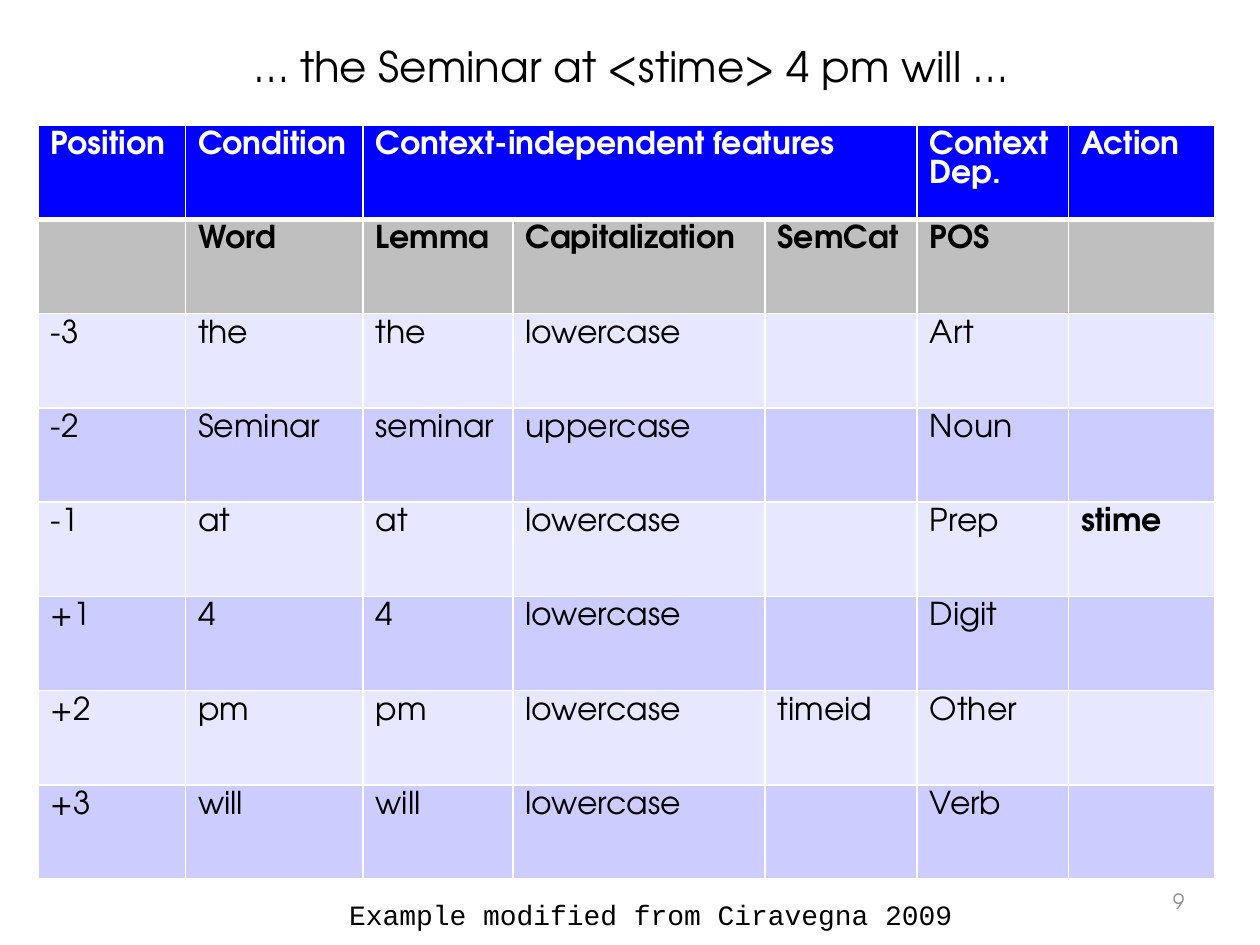
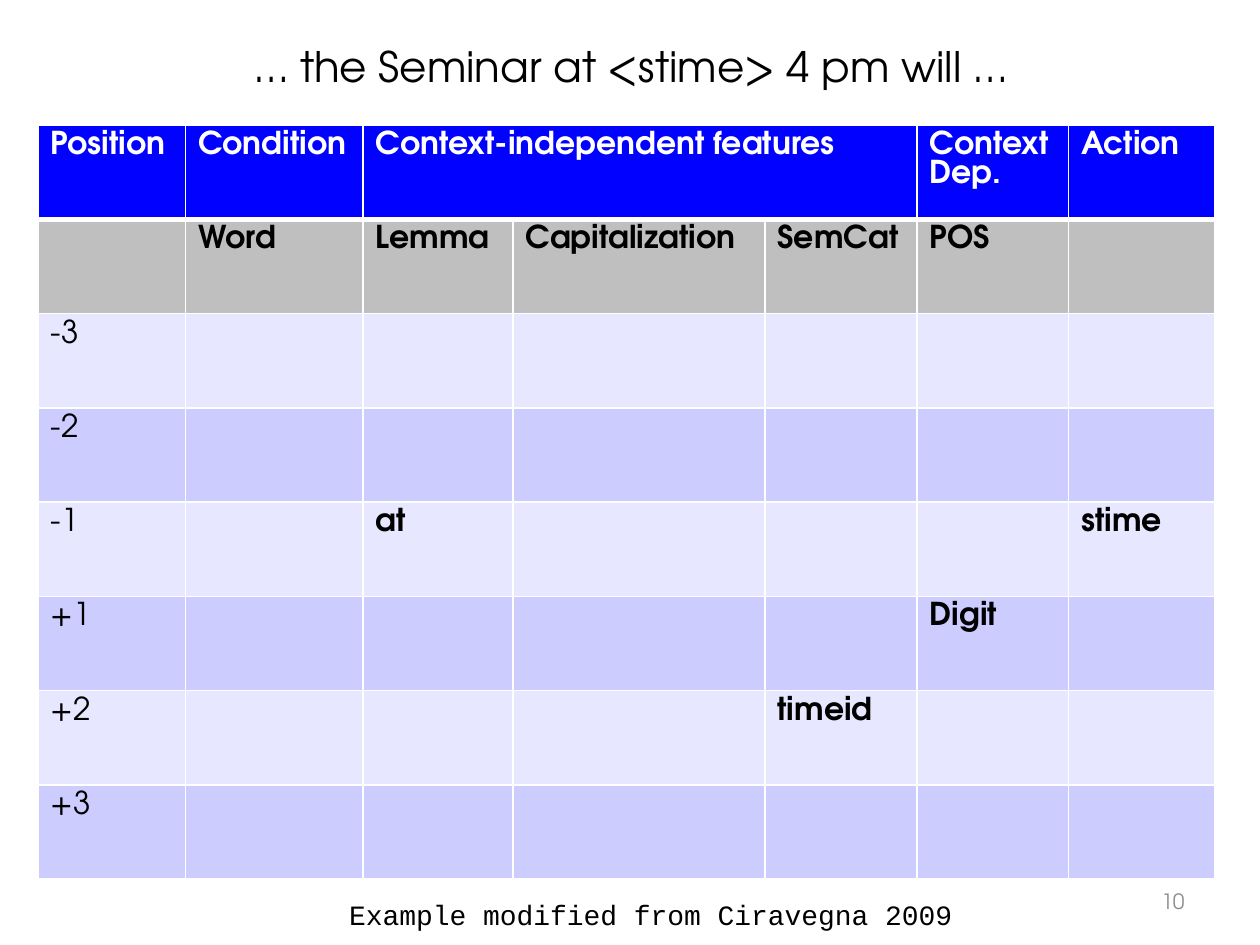
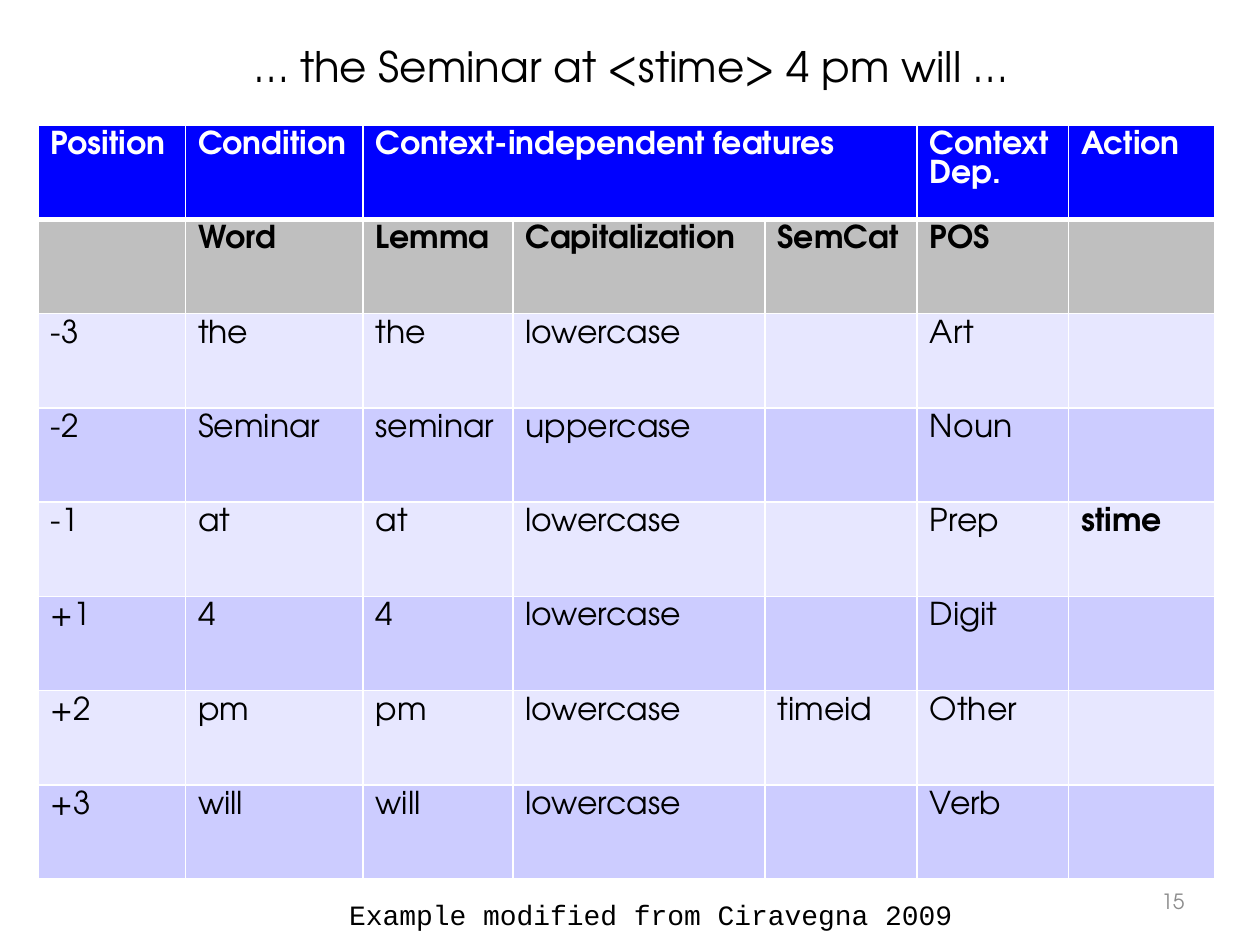
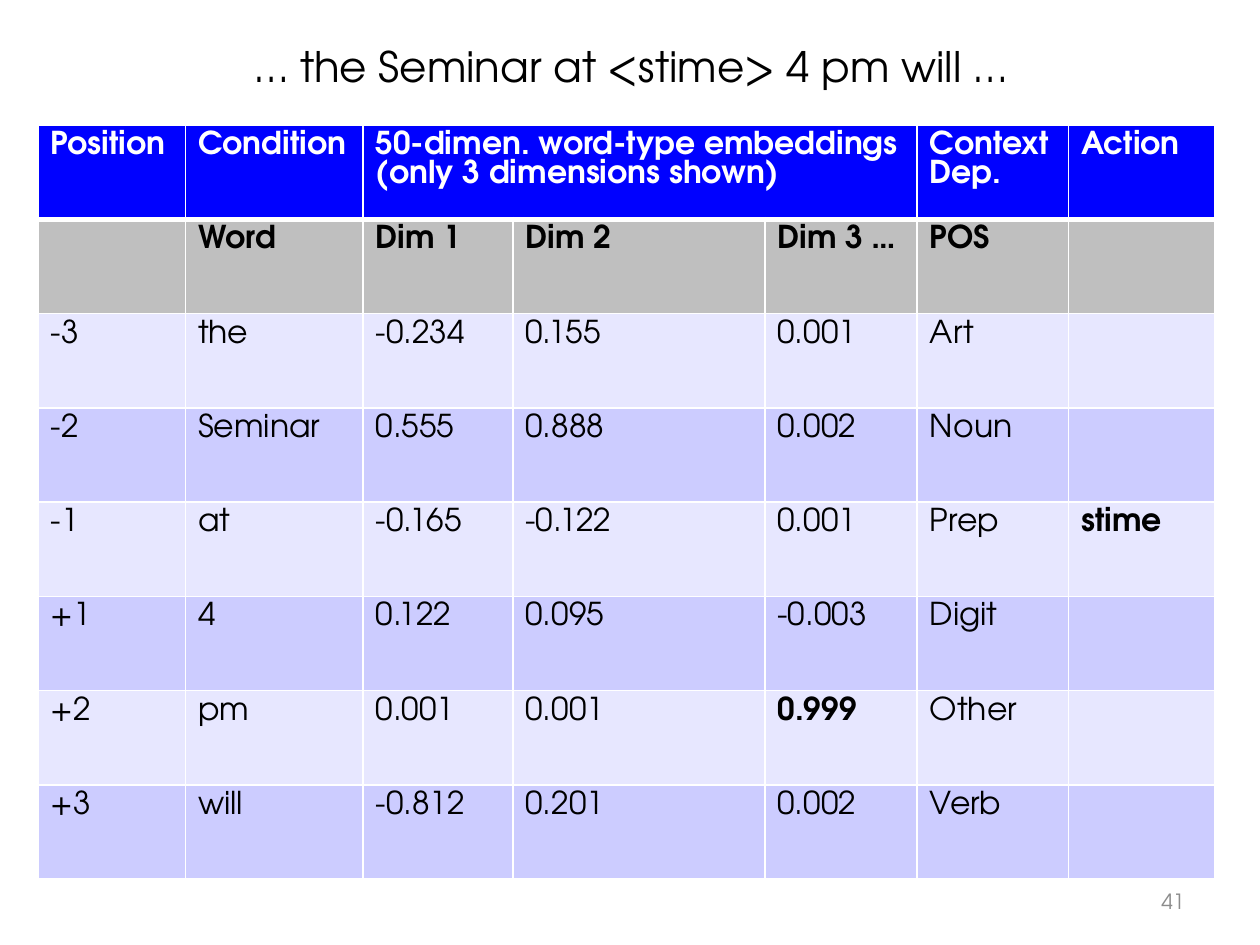
from lxml.etree import SubElement
from pptx import Presentation
from pptx.dml.color import RGBColor
from pptx.enum.text import MSO_ANCHOR, MSO_AUTO_SIZE, PP_ALIGN
from pptx.oxml.ns import qn
from pptx.util import Cm, Pt

COLORS = {
    "text": "000000",
    "white": "FFFFFF",
    "number": "8C8C8C",
    "header": "0001FF",
    "subheader": "BFBFBF",
    "light": "E7E7FF",
    "dark": "CCCCFF",
}
FONT = "TeX Gyre Adventor"
MONO = "Courier New"
TITLE = "… the Seminar at <stime> 4 pm will …"
CREDIT = "Example modified from Ciravegna 2009"

# Table geometry in cm
COL_WIDTHS = [2.97, 3.58, 3.02, 5.08, 3.07, 3.05, 2.95]
ROW_HEIGHT = 1.9
FEATURE_COLS = (2, 4)

# Table content, one entry per token; a leading * makes a cell bold
POSITIONS = ["-3", "-2", "-1", "+1", "+2", "+3"]
WORDS = ["the", "Seminar", "at", "4", "pm", "will"]
POS_TAGS = ["Art", "Noun", "Prep", "Digit", "Other", "Verb"]
ACTIONS = ["", "", "*stime", "", "", ""]
BLANK = [""] * 6

LEXICAL_HEAD = ("Context-independent features",
                ["Lemma", "Capitalization", "SemCat"])
LEXICAL = [
    ["the", "seminar", "at", "4", "pm", "will"],
    ["lowercase", "uppercase"] + ["lowercase"] * 4,
    ["", "", "", "", "timeid", ""],
]
EMBEDDING_HEAD = ("50-dimen. word-type embeddings (only 3 dimensions shown)",
                  ["Dim 1", "Dim 2", "Dim 3 …"])
EMBEDDING = [
    ["-0.234", "0.555", "-0.165", "0.122", "0.001", "-0.812"],
    ["0.155", "0.888", "-0.122", "0.095", "0.001", "0.201"],
    ["0.001", "0.002", "0.001", "-0.003", "*0.999", "0.002"],
]
RULE = [
    ["", "", "*at", "", "", ""],
    BLANK,
    ["", "", "", "", "*timeid", ""],
]
RULE_TAGS = ["", "", "", "*Digit", "", ""]


def rgb(name):
    return RGBColor.from_string(COLORS[name])


def write(tf, text, size=18, font=FONT, color="text", bold=False,
          align=PP_ALIGN.LEFT):
    p = tf.paragraphs[0]
    p.alignment = align
    r = p.add_run()
    r.text = text
    r.font.size = Pt(size)
    r.font.name = font
    r.font.bold = bold
    r.font.color.rgb = rgb(color)


def place(sp, x, y, w, h, anchor=MSO_ANCHOR.TOP):
    sp.left, sp.top, sp.width, sp.height = Cm(x), Cm(y), Cm(w), Cm(h)
    tf = sp.text_frame
    tf.word_wrap = True
    tf.auto_size = MSO_AUTO_SIZE.NONE
    tf.vertical_anchor = anchor
    return tf


def add_text(s, text, x, y, w, h, anchor=MSO_ANCHOR.TOP, **fmt):
    sp = s.shapes.add_textbox(Cm(x), Cm(y), Cm(w), Cm(h))
    write(place(sp, x, y, w, h, anchor), text, **fmt)


def set_borders(cell, top, bottom):
    tcPr = cell._tc.get_or_add_tcPr()
    for side, width in (("L", 1), ("R", 1), ("T", top), ("B", bottom)):
        ln = SubElement(tcPr, qn(f"a:ln{side}"), w=str(Pt(width)))
        fill = SubElement(ln, qn("a:solidFill"))
        SubElement(fill, qn("a:srgbClr"), val=COLORS["white"])


def row_style(row):
    """Return the fill, text colour, bold flag and top and bottom borders."""
    if row == 0:
        return "header", "white", True, 1, 3
    if row == 1:
        return "subheader", "text", True, 3, 1
    return ("dark" if row % 2 else "light"), "text", False, 1, 1


def add_feature_table(s, head, columns):
    group, names = head
    rows = [
        ["Position", "Condition", group, "", "", "Context Dep.", "Action"],
        ["", "Word", *names, "POS", ""],
        *zip(POSITIONS, *columns, ACTIONS),
    ]
    frame = s.shapes.add_table(len(rows), len(COL_WIDTHS), Cm(0.77), Cm(2.52),
                               Cm(sum(COL_WIDTHS)), Cm(ROW_HEIGHT * len(rows)))
    table = frame.table
    table.horz_banding = False
    for col, width in zip(table.columns, COL_WIDTHS):
        col.width = Cm(width)
    first, last = FEATURE_COLS
    table.cell(0, first).merge(table.cell(0, last))

    for i, values in enumerate(rows):
        table.rows[i].height = Cm(ROW_HEIGHT)
        fill, color, bold, top, bottom = row_style(i)
        for j, text in enumerate(values):
            cell = table.cell(i, j)
            set_borders(cell, top, bottom)
            cell.fill.solid()
            cell.fill.fore_color.rgb = rgb(fill)
            if text:
                write(cell.text_frame, text.lstrip("*"), color=color,
                      bold=bold or text.startswith("*"))


def add_feature_slide(prs, number, head, columns, credit=True):
    s = prs.slides.add_slide(prs.slide_layouts[5])
    write(place(s.shapes.title, 4.87, 0.69, 19.63, 1.27), TITLE, size=24)
    add_text(s, str(number), 18.21, 17.65, 5.92, 1.02, MSO_ANCHOR.MIDDLE,
             size=12, color="number", align=PP_ALIGN.RIGHT)
    add_feature_table(s, head, columns)
    if credit:
        add_text(s, CREDIT, 6.79, 17.97, 12.98, 0.94, size=16, font=MONO)


def main():
    prs = Presentation()
    prs.slide_width, prs.slide_height = Cm(25.4), Cm(19.05)

    lexical = [WORDS, *LEXICAL, POS_TAGS]
    rule = [BLANK, *RULE, RULE_TAGS]
    embedding = [WORDS, *EMBEDDING, POS_TAGS]

    add_feature_slide(prs, 9, LEXICAL_HEAD, lexical)
    add_feature_slide(prs, 10, LEXICAL_HEAD, rule)
    add_feature_slide(prs, 15, LEXICAL_HEAD, lexical)
    add_feature_slide(prs, 41, EMBEDDING_HEAD, embedding, credit=False)
    prs.save("out.pptx")


if __name__ == "__main__":
    main()
